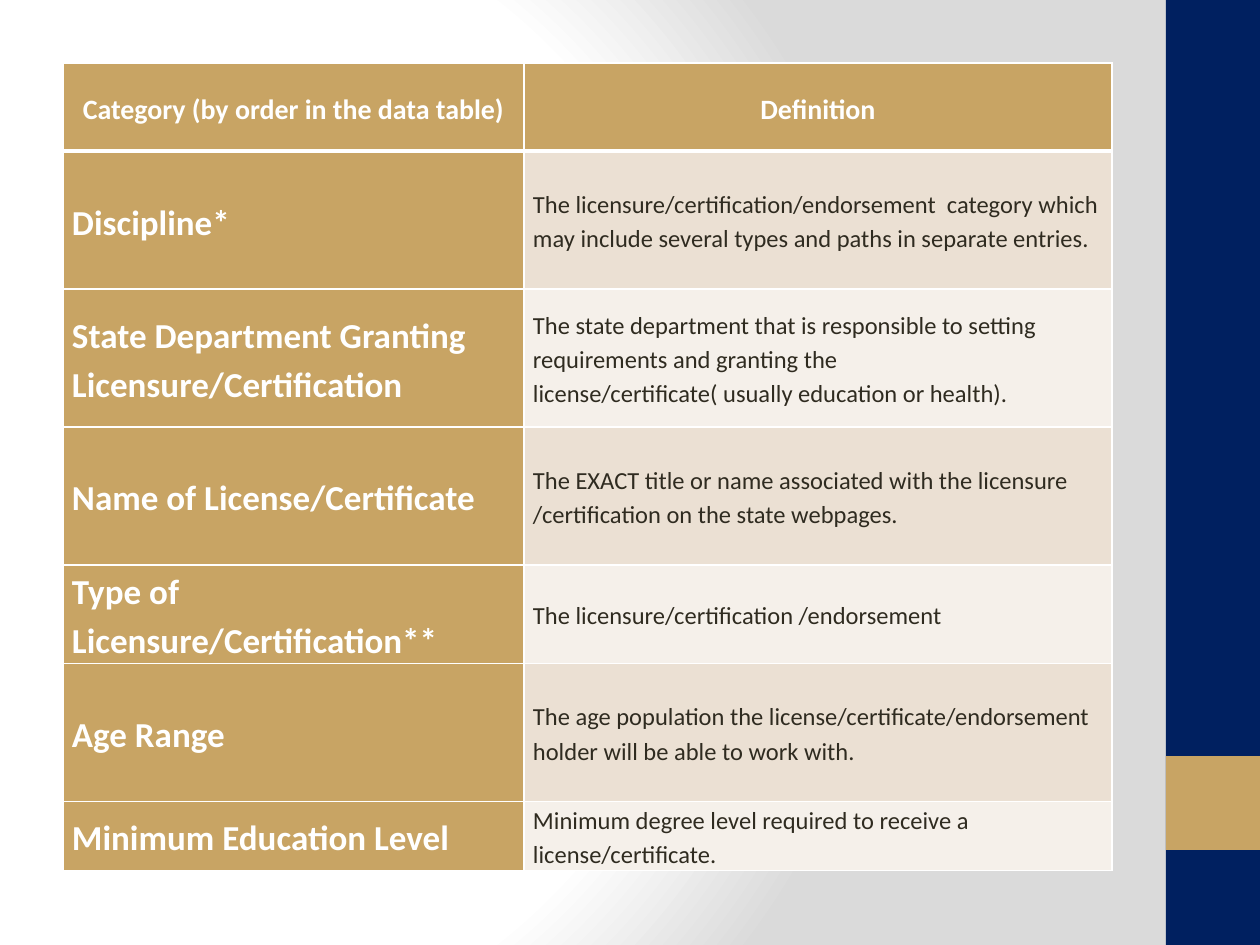
from dataclasses import dataclass

from lxml.etree import SubElement
from pptx import Presentation
from pptx.dml.color import RGBColor
from pptx.enum.shapes import MSO_SHAPE
from pptx.enum.text import MSO_ANCHOR, PP_ALIGN
from pptx.oxml import parse_xml
from pptx.oxml.ns import nsdecls, qn
from pptx.util import Emu, Pt


@dataclass(frozen=True)
class Theme:
    font: str = "Calibri"
    navy: str = "002060"
    gold: str = "C8A464"
    ink: str = "2F2B20"
    white: str = "FFFFFF"
    gray: str = "DADADA"
    bands: tuple[str, str] = ("EBE0D3", "F5F0EA")
    header_size: int = 16
    category_size: int = 20
    body_size: int = 14
    thin: int = 1
    thick: int = 3


@dataclass(frozen=True)
class Entry:
    category: str
    definition: str
    height: int


@dataclass(frozen=True)
class Block:
    left: int
    top: int
    width: int
    height: int
    color: str


THEME = Theme()
PX_PER_INCH = 126
COLUMNS = (461, 588)
TABLE_LEFT, TABLE_TOP, CELL_PAD = 63, 63, 9
HEADER = Entry("Category (by order in the data table)", "Definition", 88)
TALL, SHORT = 138, 69
ENTRIES = [
    Entry("Discipline*",
          "The licensure/certification/endorsement  category which may include "
          "several types and paths in separate entries.", TALL),
    Entry("State Department Granting Licensure/Certification",
          "The state department that is responsible to setting requirements and "
          "granting the license/certificate( usually education or health).", TALL),
    Entry("Name of License/Certificate",
          "The EXACT title or name associated with the licensure "
          "/certification on the state webpages.", TALL),
    Entry("Type of Licensure/Certification**",
          "The licensure/certification /endorsement", SHORT),
    Entry("Age Range",
          "The age population the license/certificate/endorsement holder "
          "will be able to work with.", TALL),
    Entry("Minimum Education Level",
          "Minimum degree level required to receive a license/certificate.", SHORT),
]
SIDEBAR = [
    Block(1166, 0, 94, 945, THEME.navy),
    Block(1166, 756, 94, 94, THEME.gold),
]


def px(n: int) -> Emu:
    return Emu(round(n * 914400 / PX_PER_INCH))


def set_background(s) -> None:
    stops = "".join(
        f'<a:gs pos="{pos}"><a:srgbClr val="{color}"/></a:gs>'
        for pos, color in ((0, THEME.white), (75000, THEME.white), (100000, THEME.gray))
    )
    bg = parse_xml(
        f'<p:bg {nsdecls("p", "a")}><p:bgPr><a:gradFill rotWithShape="1">'
        f'<a:gsLst>{stops}</a:gsLst><a:path path="circle">'
        '<a:fillToRect l="20000" t="50000" r="100000" b="50000"/></a:path>'
        '</a:gradFill><a:effectLst/></p:bgPr></p:bg>'
    )
    s.element.cSld.insert(0, bg)


def add_block(s, block: Block) -> None:
    sp = s.shapes.add_shape(MSO_SHAPE.RECTANGLE, px(block.left), px(block.top),
                            px(block.width), px(block.height))
    sp.shadow.inherit = False
    sp.fill.solid()
    sp.fill.fore_color.rgb = RGBColor.from_string(block.color)
    sp.line.fill.background()


def write(tf, text: str, *, size: int, color: str, bold: bool = False,
          align: PP_ALIGN = PP_ALIGN.LEFT) -> None:
    p = tf.paragraphs[0]
    p.alignment = align
    p.line_spacing = 1.15
    p.space_before = p.space_after = Pt(6)
    r = p.add_run()
    r.text = text
    r.font.name = THEME.font
    r.font.size = Pt(size)
    r.font.bold = bold
    r.font.color.rgb = RGBColor.from_string(color)


def style_cell(cell, fill: str, top: int, bottom: int) -> None:
    tcPr = cell._tc.get_or_add_tcPr()
    widths = {"L": THEME.thin, "R": THEME.thin, "T": top, "B": bottom}
    for side, width in widths.items():
        ln = SubElement(tcPr, qn(f"a:ln{side}"), w=str(Pt(width)))
        SubElement(SubElement(ln, qn("a:solidFill")), qn("a:srgbClr"), val=THEME.white)
    cell.fill.solid()
    cell.fill.fore_color.rgb = RGBColor.from_string(fill)
    cell.vertical_anchor = MSO_ANCHOR.MIDDLE
    cell.margin_left = cell.margin_right = px(CELL_PAD)
    cell.margin_top = cell.margin_bottom = 0


def add_definitions(s) -> None:
    rows = [HEADER, *ENTRIES]
    table = s.shapes.add_table(
        len(rows), len(COLUMNS), px(TABLE_LEFT), px(TABLE_TOP),
        px(sum(COLUMNS)), px(sum(row.height for row in rows))).table
    for column, width in zip(table.columns, COLUMNS):
        column.width = px(width)
    for i, row in enumerate(rows):
        table.rows[i].height = px(row.height)
        top = THEME.thick if i == 1 else THEME.thin
        bottom = THEME.thick if i == 0 else THEME.thin
        for j, text in enumerate((row.category, row.definition)):
            cell = table.cell(i, j)
            body = i > 0 and j > 0
            style_cell(cell, THEME.bands[(i - 1) % 2] if body else THEME.gold, top, bottom)
            if i == 0:
                write(cell.text_frame, text, size=THEME.header_size, color=THEME.white,
                      bold=True, align=PP_ALIGN.CENTER)
            elif body:
                write(cell.text_frame, text, size=THEME.body_size, color=THEME.ink)
            else:
                write(cell.text_frame, text, size=THEME.category_size,
                      color=THEME.white, bold=True)


def main() -> None:
    prs = Presentation()
    prs.slide_width, prs.slide_height = px(1260), px(945)
    s = prs.slides.add_slide(prs.slide_layouts[6])
    set_background(s)
    for block in SIDEBAR:
        add_block(s, block)
    add_definitions(s)
    prs.save("out.pptx")


if __name__ == "__main__":
    main()
